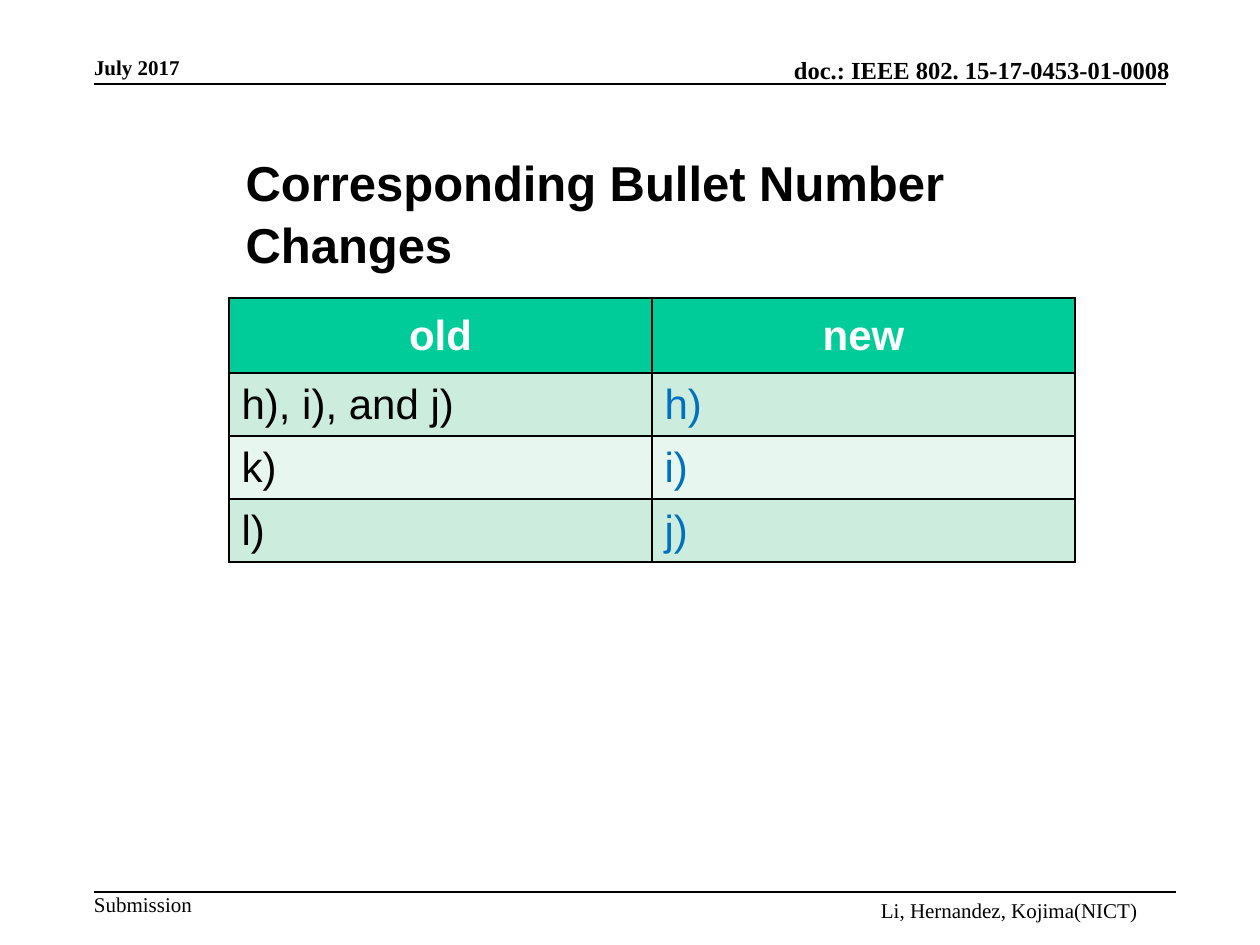
import pptx
import pptx.util
import pptx.dml.color
import pptx.enum.shapes
import pptx.enum.text
import pptx.oxml
import pptx.oxml.ns

SCALE = 914400 / 126
COLORS = {
    "ink": "000000",
    "white": "FFFFFF",
    "blue": "0070C0",
    "header": "00CC99",
    "band": "CCECDE",
    "pale": "E7F6EF",
}
Anchor = pptx.enum.text.MSO_ANCHOR
Align = pptx.enum.text.PP_ALIGN


def px(*lengths):
    return [pptx.util.Emu(round(length * SCALE)) for length in lengths]


def add_run(para, text, font, size, color, bold=False):
    span = para.add_run()
    span.text = text
    span.font.name = font
    span.font.size = pptx.util.Pt(size)
    span.font.bold = bold
    span.font.color.rgb = pptx.dml.color.RGBColor.from_string(COLORS[color])


deck = pptx.Presentation()
deck.slide_width, deck.slide_height = px(1260, 945)
page = deck.slides.add_slide(deck.slide_layouts[5])

margin_texts = [
    ("doc.: IEEE 802. 15-17-0453-01-0008", (542, 54, 655, 30), 14, True, Anchor.BOTTOM, 0, 252),
    ("Submission", (94, 892, 98, 25), 12, False, Anchor.TOP, 0, 0),
    ("July 2017", (94, 55, 198, 25), 12, True, Anchor.TOP, 0, 0),
    ("Li, Hernandez, Kojima(NICT)", (868, 892, 292, 53), 12, False, Anchor.TOP, 1, 0),
]
for text, place, size, bold, anchor, inset, indent in margin_texts:
    box = page.shapes.add_textbox(*px(*place))
    frame = box.text_frame
    frame.word_wrap = True
    frame.vertical_anchor = anchor
    frame.margin_left, frame.margin_top, frame.margin_right, frame.margin_bottom = px(
        13 * inset, 6 * inset, 13 * inset, 6 * inset)
    para = frame.paragraphs[0]
    if indent:
        para._p.get_or_add_pPr().set("marL", str(px(indent)[0]))
    add_run(para, text, "Times New Roman", size, "ink", bold)

for right, y in [(1166, 84), (1176, 892)]:
    rule = page.shapes.add_connector(
        pptx.enum.shapes.MSO_CONNECTOR.STRAIGHT, *px(94, y, right, y))
    rule.line.width = pptx.util.Pt(1)
    rule.line.color.rgb = pptx.dml.color.RGBColor.from_string(COLORS["ink"])
    pptx.oxml.ns.qn("a:effectLst")
    rule._element.spPr.append(pptx.oxml.parse_xml(
        f'<a:effectLst {pptx.oxml.ns.nsdecls("a")}/>'))

title = page.shapes.title
title.left, title.top, title.width, title.height = px(233, 143, 856, 72)
frame = title.text_frame
frame.word_wrap = True
frame.auto_size = pptx.enum.text.MSO_AUTO_SIZE.NONE
frame.vertical_anchor = Anchor.TOP
para = frame.paragraphs[0]
para.alignment = Align.LEFT
para.line_spacing = 1.05
add_run(para, "Corresponding Bullet Number Changes", "Arial", 28, "ink", True)

rows = [("old", "new"), ("h), i), and j)", "h)"), ("k)", "i)"), ("l)", "j)")]
table = page.shapes.add_table(len(rows), 2, *px(229, 298, 846, 264)).table
for column in table.columns:
    column.width = px(423)[0]
for row_index, row in enumerate(rows):
    is_header = row_index == 0
    table.rows[row_index].height = px(75 if is_header else 63)[0]
    fill = "header" if is_header else "band" if row_index % 2 else "pale"
    for column_index, text in enumerate(row):
        cell = table.cell(row_index, column_index)
        cell.vertical_anchor = Anchor.MIDDLE
        para = cell.text_frame.paragraphs[0]
        para.alignment = Align.CENTER if is_header else Align.LEFT
        color = "white" if is_header else ("ink", "blue")[column_index]
        add_run(para, text, "Arial", 24, color, is_header)
        for side in ("lnL", "lnR", "lnT", "lnB"):
            cell._tc.get_or_add_tcPr().append(pptx.oxml.parse_xml(
                f'<a:{side} {pptx.oxml.ns.nsdecls("a")} w="12700"><a:solidFill>'
                f'<a:srgbClr val="{COLORS["ink"]}"/></a:solidFill></a:{side}>'))
        cell.fill.solid()
        cell.fill.fore_color.rgb = pptx.dml.color.RGBColor.from_string(COLORS[fill])

deck.save("out.pptx")
